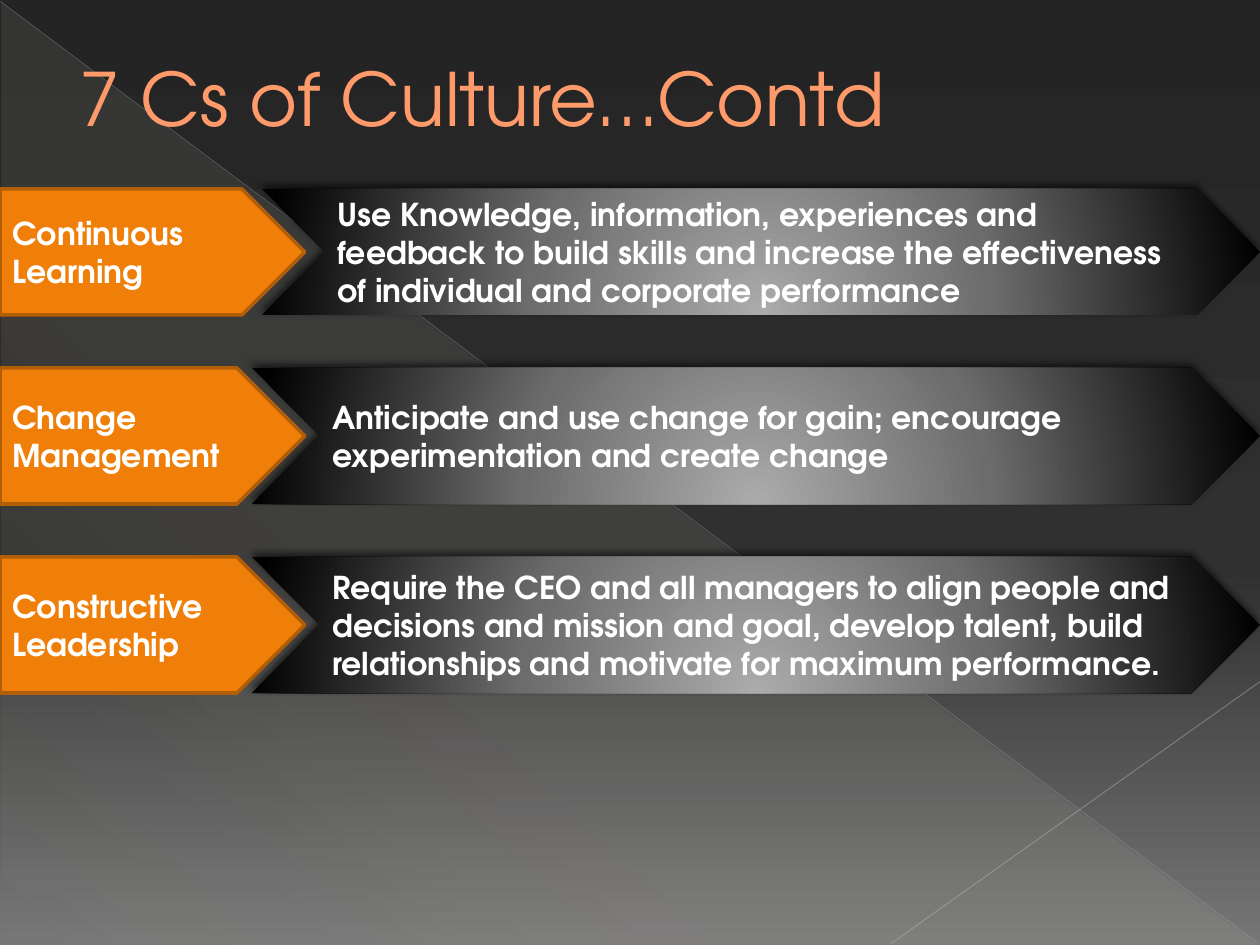
import pptx
import pptx.dml.color
import pptx.enum.shapes
import pptx.enum.text
import pptx.oxml
import pptx.oxml.ns
import pptx.util
from pptx.util import Inches

RGBColor = pptx.dml.color.RGBColor
SHAPE = pptx.enum.shapes.MSO_SHAPE
ANCHOR = pptx.enum.text.MSO_ANCHOR
ALIGN = pptx.enum.text.PP_ALIGN
qn = pptx.oxml.ns.qn

WHITE = RGBColor(0xFF, 0xFF, 0xFF)
BLACK = RGBColor(0x00, 0x00, 0x00)
CORAL = RGBColor(0xFF, 0x9B, 0x6A)
BROWN = RGBColor(0xA6, 0x58, 0x06)
ORANGE = RGBColor(0xF0, 0x7F, 0x09)
DARK_ORANGE = RGBColor(0xB2, 0x5E, 0x07)
CREAM = RGBColor(0xE3, 0xDE, 0xD1)
SILVER = RGBColor(0xB6, 0xB6, 0xB6)
LIGHT_GREY = RGBColor(0xBF, 0xBF, 0xBF)
NIGHT = RGBColor(0x24, 0x24, 0x24)
CHARCOAL = RGBColor(0x30, 0x30, 0x30)
STONE = RGBColor(0x76, 0x76, 0x76)
GLOW = RGBColor(0xAB, 0xAB, 0xAB)
SLATE = RGBColor(0x6C, 0x6C, 0x6C)

RADIAL = ('<a:path path="circle"><a:fillToRect l="50000" t="155000" '
          'r="50000" b="-55000"/></a:path>')
CHEVRON_STOPS = [(0, GLOW, 100), (46, SLATE, 100), (100, BLACK, 100)]

# top, height, chevron left, label, description
ROWS = [
    (1.5, 1, 2.08, "Continuous Learning",
     "Use Knowledge, information, experiences and feedback to build skills and "
     "increase the effectiveness of individual and corporate performance"),
    (2.92, 1.08, 2, "Change Management",
     "Anticipate and use change for gain; encourage experimentation and create change"),
    (4.42, 1.08, 2, "Constructive Leadership",
     "Require the CEO and all managers to align people and decisions and mission and "
     "goal, develop talent, build relationships and motivate for maximum performance."),
]


def drawing_xml(tag, attributes, content):
    return pptx.oxml.parse_xml(
        f'<a:{tag} {pptx.oxml.ns.nsdecls("a")} {attributes}>{content}</a:{tag}>')


def color_xml(color, opacity=100):
    return f'<a:srgbClr val="{color}"><a:alpha val="{opacity * 1000}"/></a:srgbClr>'


def linear(angle):
    return f'<a:lin ang="{angle * 60000}" scaled="0"/>'


def set_gradient(fill, parent, stops, direction):
    """Fill parent with (position, colour, opacity) stops along direction."""
    fill.solid()
    content = "".join(f'<a:gs pos="{position * 1000}">{color_xml(color, opacity)}</a:gs>'
                      for position, color, opacity in stops)
    gradient = drawing_xml("gradFill", 'rotWithShape="1"',
                           f"<a:gsLst>{content}</a:gsLst>{direction}")
    parent.replace(parent.find(qn("a:solidFill")), gradient)


class CultureSlide:
    font = "TeX Gyre Adventor"
    body_size = 18
    title_size = 42

    def __init__(self, presentation):
        self.slide = presentation.slides.add_slide(presentation.slide_layouts[5])

    def background(self, stops):
        fill = self.slide.background.fill
        fill.solid()
        properties = self.slide.element.find(".//" + qn("p:bgPr"))
        set_gradient(fill, properties, stops, linear(90))

    def shape(self, kind, left, top, width, height):
        shape = self.slide.shapes.add_shape(
            kind, Inches(left), Inches(top), Inches(width), Inches(height))
        shape.shadow.inherit = False
        shape.line.fill.background()
        return shape

    def text(self, frame, words, size, color, bold):
        frame.word_wrap = True
        frame.vertical_anchor = ANCHOR.MIDDLE
        paragraph = frame.paragraphs[0]
        paragraph.alignment = ALIGN.LEFT
        run = paragraph.add_run()
        run.text = words
        run.font.name = self.font
        run.font.size = pptx.util.Pt(size)
        run.font.bold = bold
        run.font.color.rgb = color
        return run

    def title(self, words):
        title = self.slide.shapes.title
        title.left, title.top = Inches(0), Inches(0.29)
        title.width, title.height = Inches(9.83), Inches(0.96)
        run = self.text(title.text_frame, words, self.title_size, CORAL, False)
        title.text_frame.paragraphs[0].alignment = ALIGN.LEFT
        indent = title.text_frame.paragraphs[0]._p.get_or_add_pPr()
        indent.set("marL", str(Inches(0.53)))
        indent.set("indent", "0")
        outline = drawing_xml("ln", f'w="{pptx.util.Pt(0.5)}"',
                              f"<a:solidFill>{color_xml(BROWN)}</a:solidFill>")
        run.font._element.insert(0, outline)
        # The title lies above the corner decoration.
        self.slide.shapes.element.append(title.element)

    def corner_triangle(self):
        triangle = self.shape(SHAPE.RIGHT_TRIANGLE, 0.01, 0.02, 9.98, 7.48)
        stops = [(0, CREAM, 10), (70, CREAM, 8), (100, CREAM, 1)]
        set_gradient(triangle.fill, triangle.element.spPr, stops, linear(133))

    def hairline(self, start, end, color, width, opacity):
        line = self.slide.shapes.add_connector(
            pptx.enum.shapes.MSO_CONNECTOR.STRAIGHT,
            *(Inches(value) for value in start + end))
        line.line.width = pptx.util.Pt(width)
        line.line.color.rgb = color
        properties = line.element.spPr
        solid = properties.find(".//" + qn("a:solidFill"))
        solid.getparent().replace(solid, drawing_xml("solidFill", "", color_xml(color, opacity)))
        properties.append(drawing_xml("effectLst", "", ""))

    def label(self, words, top, height):
        label = self.shape(SHAPE.PENTAGON, 0, top, 2.42, height)
        label.fill.solid()
        label.fill.fore_color.rgb = ORANGE
        label.line.color.rgb = DARK_ORANGE
        label.line.width = pptx.util.Pt(2)
        self.text(label.text_frame, words, self.body_size, WHITE, True)

    def description(self, words, left, top, height):
        chevron = self.shape(SHAPE.CHEVRON, left, top, 10 - left, height)
        properties = chevron.element.spPr
        set_gradient(chevron.fill, properties, CHEVRON_STOPS, RADIAL)
        shadow = drawing_xml(
            "outerShdw",
            f'blurRad="{pptx.util.Pt(4)}" dist="{pptx.util.Pt(3)}" '
            f'dir="{245 * 60000}" rotWithShape="0"',
            color_xml(BLACK, 60))
        properties.find(qn("a:effectLst")).append(shadow)
        self.text(chevron.text_frame, words, self.body_size, WHITE, True)


def main():
    presentation = pptx.Presentation()
    presentation.slide_width = Inches(10)
    presentation.slide_height = Inches(7.5)

    culture = CultureSlide(presentation)
    culture.background([(0, NIGHT, 100), (60, CHARCOAL, 100), (100, STONE, 100)])
    culture.corner_triangle()
    culture.hairline((0, 0.01), (9.99, 7.49), SILVER, 0.39, 35)
    culture.hairline((10, 5.41), (7.07, 7.49), LIGHT_GREY, 0.47, 45)
    culture.title("7 Cs of Culture…Contd")
    for top, height, chevron_left, name, meaning in ROWS:
        culture.label(name, top, height)
        culture.description(meaning, chevron_left, top, height)

    presentation.save("out.pptx")


if __name__ == "__main__":
    main()
